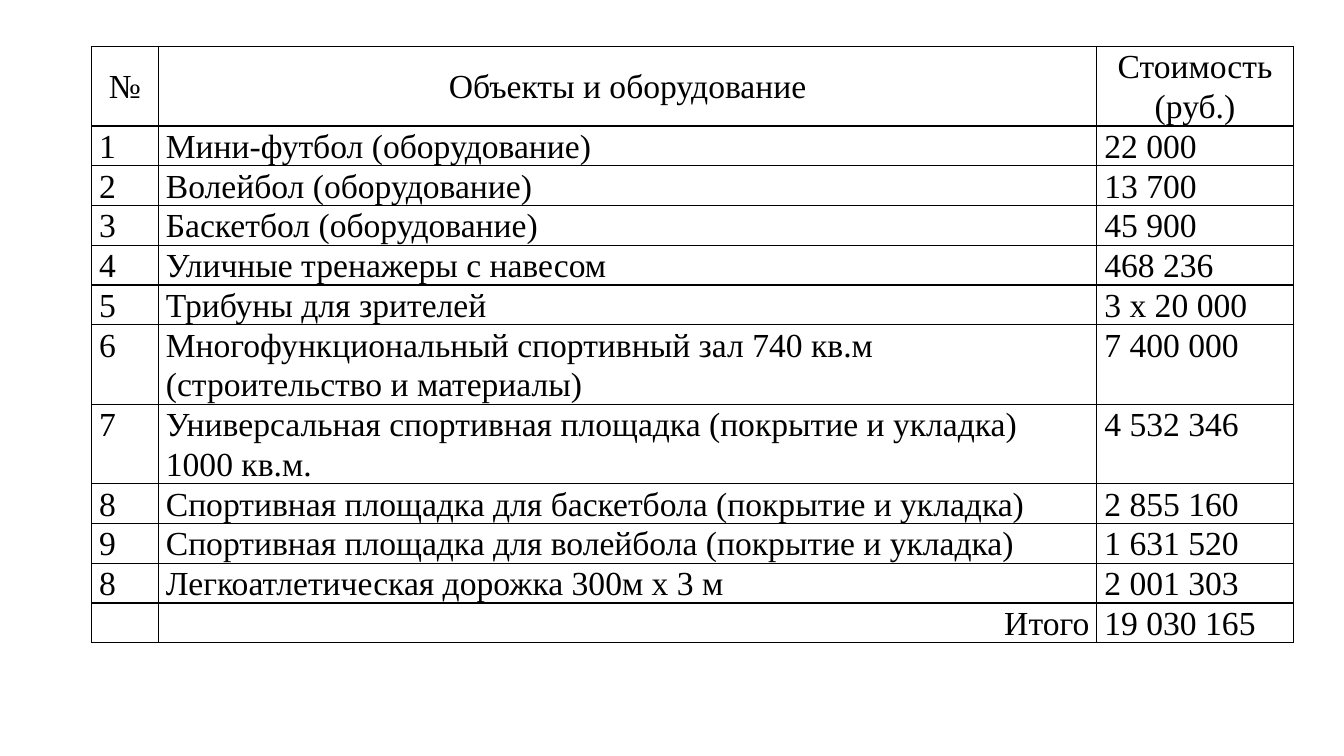
from lxml import etree
from pptx import Presentation
from pptx import util as u
from pptx.dml import color
from pptx.enum import text
from pptx.oxml import ns

FONT = "Times New Roman"
BLACK = "000000"
WHITE = "FFFFFF"
LEFT, CENTER, RIGHT, JUSTIFY = (text.PP_ALIGN.LEFT, text.PP_ALIGN.CENTER,
                                text.PP_ALIGN.RIGHT, text.PP_ALIGN.JUSTIFY)

COLUMN_WIDTHS = [1.68, 23.65, 4.95]
LINE_HEIGHT, DOUBLE_HEIGHT = 0.9, 1.85
TALL_ROWS = {0, 6, 7 - 1}

HEADER = ("№", "Объекты и оборудование", "Стоимость (руб.)")
ITEMS = [
    ("1", "Мини-футбол (оборудование)", "22 000"),
    ("2", "Волейбол (оборудование)", "13 700"),
    ("3", "Баскетбол (оборудование)", "45 900"),
    ("4", "Уличные тренажеры с навесом", "468 236"),
    ("5", "Трибуны для зрителей", "3 х 20 000"),
    ("6", "Многофункциональный спортивный зал 740 кв.м (строительство и материалы)",
     "7 400 000"),
    ("7", "Универсальная спортивная площадка (покрытие и укладка) 1000 кв.м.",
     "4 532 346"),
    ("8", "Спортивная площадка для баскетбола (покрытие и укладка)", "2 855 160"),
    ("9", "Спортивная площадка для волейбола (покрытие и укладка)", "1 631 520"),
    ("8", "Легкоатлетическая дорожка 300м х 3 м", "2 001 303"),
]
TOTAL = ("", "Итого", "19 030 165")


def rgb(value):
    return color.RGBColor.from_string(value)


def add_borders(cell, value, points):
    """Draw all four sides; border lines must precede the cell fill."""
    properties = cell._tc.get_or_add_tcPr()
    for index, side in enumerate(("lnL", "lnR", "lnT", "lnB")):
        line = etree.Element(ns.qn(f"a:{side}"), w=str(u.Pt(points)))
        fill = etree.SubElement(line, ns.qn("a:solidFill"))
        etree.SubElement(fill, ns.qn("a:srgbClr"), val=value)
        properties.insert(index, line)


def fill_cell(cell, words, align, anchor):
    cell.margin_left = cell.margin_right = u.Cm(0.19)
    cell.margin_top = cell.margin_bottom = 0
    cell.vertical_anchor = anchor
    cell.fill.solid()
    cell.fill.fore_color.rgb = rgb(WHITE)
    add_borders(cell, BLACK, 1)
    para = cell.text_frame.paragraphs[0]
    para.text = words
    para.alignment = align
    para.line_spacing = 1.07
    para.space_after = u.Pt(7.5)
    para.font.name = FONT
    para.font.size = u.Pt(24)
    para.font.color.rgb = rgb(BLACK)


def add_cost_table(page):
    rows = [HEADER, *ITEMS, TOTAL]
    heights = [DOUBLE_HEIGHT if index in TALL_ROWS else LINE_HEIGHT
               for index in range(len(rows))]
    frame = page.shapes.add_table(len(rows), len(COLUMN_WIDTHS), u.Cm(2.31), u.Cm(1.17),
                                  u.Cm(sum(COLUMN_WIDTHS)), u.Cm(sum(heights)))
    table = frame.table
    table.first_row = table.horz_banding = False
    for column, width in zip(table.columns, COLUMN_WIDTHS):
        column.width = u.Cm(width)
    for row, height in zip(table.rows, heights):
        row.height = u.Cm(height)

    # Header is centred, the total label is right-aligned
    for index, values in enumerate(rows):
        aligns = (JUSTIFY, LEFT, JUSTIFY)
        anchor = text.MSO_ANCHOR.TOP
        if values is HEADER:
            aligns = (CENTER,) * 3
            anchor = text.MSO_ANCHOR.MIDDLE
        elif values is TOTAL:
            aligns = (JUSTIFY, RIGHT, JUSTIFY)
        for column, (words, align) in enumerate(zip(values, aligns)):
            fill_cell(table.cell(index, column), words, align, anchor)


def main():
    deck = Presentation()
    deck.slide_width, deck.slide_height = u.Cm(33.87), u.Cm(19.05)
    page = deck.slides.add_slide(deck.slide_layouts[6])
    add_cost_table(page)
    deck.save("out.pptx")


if __name__ == "__main__":
    main()
